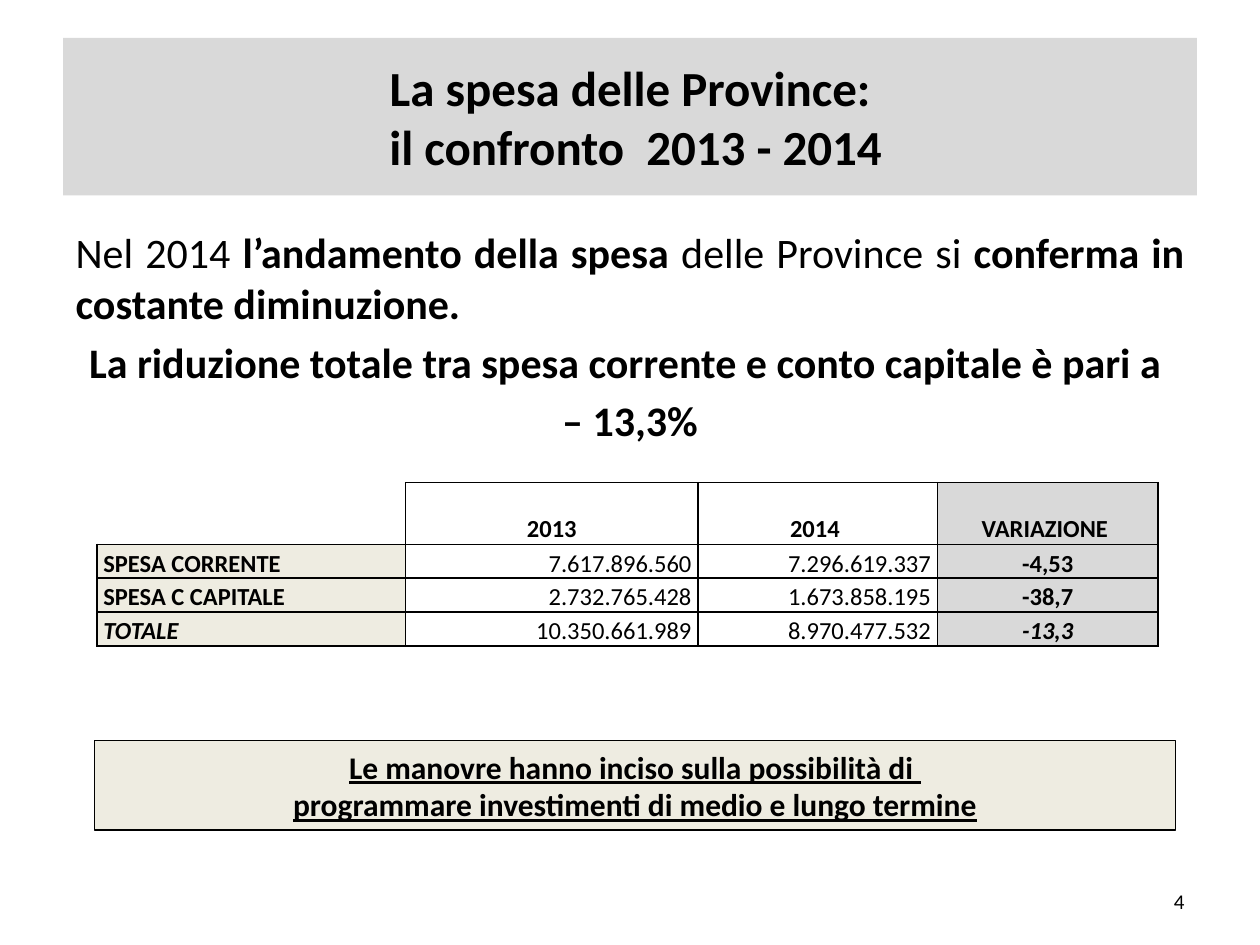
from lxml import etree
from pptx import Presentation
from pptx.dml.color import RGBColor
from pptx.enum.shapes import MSO_SHAPE
from pptx.enum.text import MSO_ANCHOR, MSO_AUTO_SIZE, PP_ALIGN
from pptx.oxml.ns import qn
from pptx.util import Pt

LEFT, CENTER, RIGHT = PP_ALIGN.LEFT, PP_ALIGN.CENTER, PP_ALIGN.RIGHT
JUSTIFY = PP_ALIGN.JUSTIFY
MIDDLE, BOTTOM = MSO_ANCHOR.MIDDLE, MSO_ANCHOR.BOTTOM
NO_AUTOFIT = MSO_AUTO_SIZE.NONE
RECTANGLE = MSO_SHAPE.RECTANGLE

FONT = "Calibri"
COLORS = {"text": "000000", "line": "000000", "white": "FFFFFF",
          "gray": "D9D9D9", "cream": "EEECE1"}

COLUMN_WIDTHS = [176.4, 167.04, 136.8, 126]
ROW_HEIGHTS = [35.28, 18, 18, 18]
COLUMN_FILLS = ["cream", "white", "white", "gray"]
COLUMN_ALIGNS = [LEFT, RIGHT, RIGHT, CENTER]
TABLE_ROWS = [
    ["", "2013", "2014 ", "VARIAZIONE "],
    ["SPESA CORRENTE", "7.617.896.560", "7.296.619.337", "-4,53"],
    ["SPESA C CAPITALE", "2.732.765.428", "1.673.858.195", "-38,7"],
    ["TOTALE", "10.350.661.989", "8.970.477.532", "-13,3"],
]


def color(name):
    return RGBColor.from_string(COLORS[name])


def fill_solid(target, name):
    target.fill.solid()
    target.fill.fore_color.rgb = color(name)


def place(shape, box):
    shape.left, shape.top, shape.width, shape.height = (Pt(length) for length in box)


def add_run(paragraph, text, size, bold=False, italic=False, underline=False):
    run = paragraph.add_run()
    run.text = text
    font = run.font
    font.name, font.size = FONT, Pt(size)
    font.bold, font.italic, font.underline = bold, italic, underline
    font.color.rgb = color("text")


def next_paragraph(frame, index, align):
    paragraph = frame.paragraphs[0] if index == 0 else frame.add_paragraph()
    paragraph.alignment = align
    return paragraph


def remove_bullet(paragraph):
    properties = paragraph._p.get_or_add_pPr()
    properties.set("marL", "0")
    properties.set("indent", "0")
    etree.SubElement(properties, qn("a:buNone"))


def set_borders(cell, visible):
    """Draw the sides named in visible (of L, R, T, B) and hide the others."""
    properties = cell._tc.get_or_add_tcPr()
    for index, side in enumerate("LRTB"):
        line = etree.Element(qn(f"a:ln{side}"), w=str(Pt(1)))
        if side in visible:
            fill = etree.SubElement(line, qn("a:solidFill"))
            etree.SubElement(fill, qn("a:srgbClr"), val=COLORS["line"])
        else:
            etree.SubElement(line, qn("a:noFill"))
        properties.insert(index, line)


def add_title(slide, box):
    title = slide.shapes.title
    place(title, box)
    fill_solid(title, "gray")
    frame = title.text_frame
    frame.auto_size = NO_AUTOFIT
    frame.vertical_anchor = MIDDLE
    paragraph = next_paragraph(frame, 0, CENTER)
    add_run(paragraph, "La spesa delle Province:", 28, bold=True)
    paragraph.add_line_break()
    add_run(paragraph, " il confronto  2013 - 2014", 28, bold=True)


def add_body(slide, box):
    body = slide.placeholders[1]
    place(body, box)
    frame = body.text_frame
    frame.auto_size = NO_AUTOFIT
    paragraphs = [
        (JUSTIFY, [("Nel 2014 ", False), ("l’andamento della spesa ", True),
                   ("delle Province si ", False),
                   ("conferma in costante diminuzione. ", True)]),
        (CENTER, [("La riduzione totale tra spesa corrente e conto capitale è pari a ",
                   True)]),
        (CENTER, [("– 13,3%", True)]),
    ]
    for index, (align, runs) in enumerate(paragraphs):
        paragraph = next_paragraph(frame, index, align)
        remove_bullet(paragraph)
        for text, bold in runs:
            add_run(paragraph, text, 24, bold)


def fill_cell(cell, row, column, text):
    cell.margin_left = cell.margin_right = Pt(3.6)
    cell.margin_top = cell.margin_bottom = 0
    cell.vertical_anchor = BOTTOM
    if not text:
        cell.fill.background()
        set_borders(cell, "RB")
        return
    header = row == 0
    outer_column = column in (0, len(COLUMN_WIDTHS) - 1)
    total = row == len(TABLE_ROWS) - 1
    fill_solid(cell, COLUMN_FILLS[column])
    set_borders(cell, "LRTB")
    align = CENTER if header else COLUMN_ALIGNS[column]
    paragraph = next_paragraph(cell.text_frame, 0, align)
    paragraph.line_spacing = 1.15
    add_run(paragraph, text, 14, bold=header or outer_column,
            italic=total and outer_column)


def add_spending_table(slide, left, top):
    frame = slide.shapes.add_table(
        len(ROW_HEIGHTS), len(COLUMN_WIDTHS), Pt(left), Pt(top),
        Pt(sum(COLUMN_WIDTHS)), Pt(sum(ROW_HEIGHTS)))
    table = frame.table
    table.first_row = table.horz_banding = False
    for column, width in zip(table.columns, COLUMN_WIDTHS):
        column.width = Pt(width)
    for row, height in zip(table.rows, ROW_HEIGHTS):
        row.height = Pt(height)
    for row, texts in enumerate(TABLE_ROWS):
        for column, text in enumerate(texts):
            fill_cell(table.cell(row, column), row, column, text)


def add_conclusion(slide, box):
    shape = slide.shapes.add_shape(RECTANGLE, *(Pt(length) for length in box))
    shape.shadow.inherit = False
    fill_solid(shape, "cream")
    shape.line.color.rgb = color("line")
    shape.line.width = Pt(0.75)
    frame = shape.text_frame
    frame.word_wrap = True
    lines = ["Le manovre hanno inciso sulla possibilità di ",
             "programmare investimenti di medio e lungo termine"]
    for index, text in enumerate(lines):
        paragraph = next_paragraph(frame, index, CENTER)
        add_run(paragraph, text, 18, bold=True, underline=True)


def add_page_number(slide, box, number):
    text_box = slide.shapes.add_textbox(*(Pt(length) for length in box))
    frame = text_box.text_frame
    frame.word_wrap = True
    frame.vertical_anchor = MIDDLE
    add_run(next_paragraph(frame, 0, RIGHT), str(number), 12)


def main():
    presentation = Presentation()
    presentation.slide_width, presentation.slide_height = Pt(720), Pt(540)
    slide = presentation.slides.add_slide(presentation.slide_layouts[1])
    add_title(slide, (36, 21.6, 648, 90))
    add_body(slide, (36, 126, 648, 356.4))
    add_page_number(slide, (516, 500.5, 168, 28.75), 4)
    add_spending_table(slide, 55.44, 275.76)
    add_conclusion(slide, (54, 423.36, 617.76, 50.9))
    presentation.save("out.pptx")


if __name__ == "__main__":
    main()
